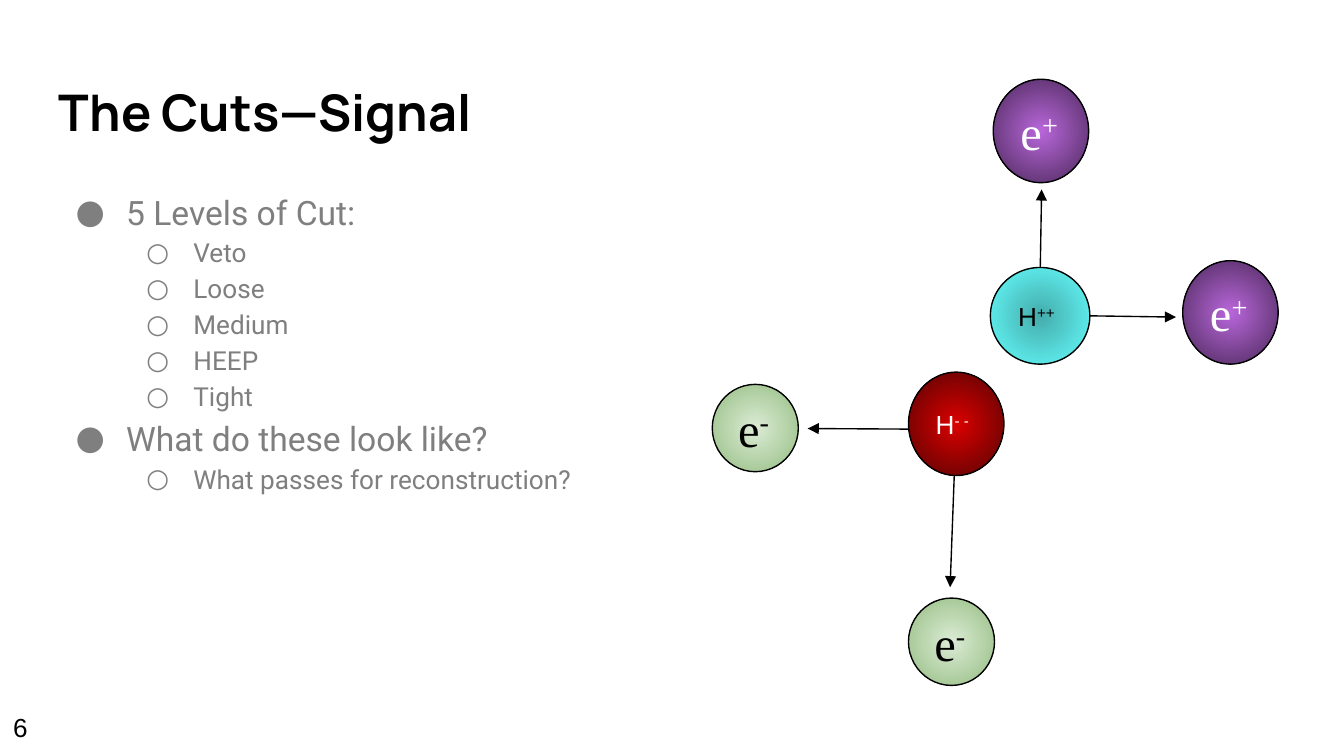
from dataclasses import dataclass

from lxml.etree import SubElement
from pptx import Presentation
from pptx.dml.color import RGBColor
from pptx.enum.shapes import MSO_CONNECTOR as Connector, MSO_SHAPE as Preset
from pptx.enum.text import MSO_ANCHOR as Anchor
from pptx.oxml import parse_xml
from pptx.oxml.ns import nsdecls, qn
from pptx.slide import Slide
from pptx.text.text import TextFrame, _Paragraph as Paragraph
from pptx.util import Pt

BLACK, WHITE, GREY = "000000", "FFFFFF", "7F7F7F"
INSET = 7.2
LINE_WIDTH = 0.75


@dataclass(frozen=True)
class Species:
    symbol: str
    charge: str
    width: float
    height: float
    inner: str
    outer: str
    font: str
    size: float
    color: str


@dataclass(frozen=True)
class Particle:
    species: Species
    left: float
    top: float


@dataclass(frozen=True)
class Arrow:
    start: tuple[float, float]
    end: tuple[float, float]


@dataclass(frozen=True)
class Level:
    bullet: str
    size: float
    margin: float
    indent: float


POSITRON = Species("e", "+", 51.1, 55.4, "B967DB", "492857", "Times New Roman", 26, WHITE)
ELECTRON = Species("e", "-", 46.1, 46.8, "DCECD5", "93BC81", "Times New Roman", 26, BLACK)
HIGGS_MINUS = Species("H", "- -", 51.1, 55.4, "DB0000", "540303", "Arial", 14, WHITE)
HIGGS_PLUS = Species("H", "++", 53.3, 51.8, "45ACAC", "66FFFF", "Arial", 14, BLACK)

PARTICLES = [
    Particle(HIGGS_MINUS, 486.7, 199.4),
    Particle(HIGGS_PLUS, 530.6, 143.3),
    Particle(ELECTRON, 381.6, 205.9),
    Particle(ELECTRON, 486.7, 320.4),
    Particle(POSITRON, 532.1, 42.5),
    Particle(POSITRON, 633.6, 139.7),
]
ARROWS = [
    Arrow((511.2, 254.9), (509, 314.6)),
    Arrow((486.7, 229.9), (432.7, 229.6)),
    Arrow((557.3, 143.3), (558, 101.5)),
    Arrow((583.9, 169.2), (630, 169.9)),
]

TOPIC = Level("●", 18, 36, -27)
DETAIL = Level("○", 14, 72, -25.2)
OUTLINE = [
    (TOPIC, "5 Levels of Cut:"),
    *((DETAIL, name) for name in ("Veto", "Loose", "Medium", "HEEP", "Tight")),
    (TOPIC, "What do these look like?"),
    (DETAIL, "What passes for reconstruction?"),
]


def rgb(color: str) -> RGBColor:
    return RGBColor.from_string(color)


def set_font(para: Paragraph, name: str, size: float, color: str, bold: bool = False) -> None:
    para.font.name = name
    para.font.size = Pt(size)
    para.font.bold = bold
    para.font.color.rgb = rgb(color)


def set_frame(frame: TextFrame, anchor: Anchor) -> None:
    frame.word_wrap = True
    frame.vertical_anchor = anchor
    frame.margin_left = frame.margin_right = Pt(INSET)
    frame.margin_top = frame.margin_bottom = Pt(INSET)


def add_text_box(page: Slide, left: float, top: float, width: float, height: float,
                 anchor: Anchor = Anchor.TOP) -> TextFrame:
    box = page.shapes.add_textbox(Pt(left), Pt(top), Pt(width), Pt(height))
    set_frame(box.text_frame, anchor)
    return box.text_frame


def set_bullet(para: Paragraph, level: Level) -> None:
    props = para._p.get_or_add_pPr()
    props.set("marL", str(Pt(level.margin)))
    props.set("indent", str(Pt(level.indent)))
    SubElement(SubElement(props, qn("a:buClr")), qn("a:srgbClr"), val=GREY)
    SubElement(props, qn("a:buFont"), typeface="Roboto")
    SubElement(props, qn("a:buChar"), char=level.bullet)


def add_outline(page: Slide) -> None:
    frame = add_text_box(page, 24.5, 92.2, 671, 269.3)
    for index, (level, text) in enumerate(OUTLINE):
        para = frame.add_paragraph() if index else frame.paragraphs[0]
        para.text = text
        para.level = int(level is DETAIL)
        para.line_spacing = 1.15
        set_bullet(para, level)
        set_font(para, "Roboto", level.size, GREY)


def add_particle(page: Slide, particle: Particle) -> None:
    kind = particle.species
    ball = page.shapes.add_shape(Preset.OVAL, Pt(particle.left), Pt(particle.top),
                                 Pt(kind.width), Pt(kind.height))
    ball.shadow.inherit = False
    ball.line.color.rgb = rgb(BLACK)
    ball.line.width = Pt(LINE_WIDTH)

    # Radial gradient from the centre outwards
    ball._element.spPr.find(qn("a:prstGeom")).addnext(parse_xml(
        f'<a:gradFill {nsdecls("a")} rotWithShape="1"><a:gsLst>'
        f'<a:gs pos="0"><a:srgbClr val="{kind.inner}"/></a:gs>'
        f'<a:gs pos="100000"><a:srgbClr val="{kind.outer}"/></a:gs></a:gsLst>'
        '<a:path path="circle"><a:fillToRect l="50000" t="50000" r="50000" b="50000"/>'
        '</a:path></a:gradFill>'))

    # Symbol with its charge raised
    set_frame(ball.text_frame, Anchor.MIDDLE)
    para = ball.text_frame.paragraphs[0]
    para.alignment = 1
    para.add_run().text = kind.symbol
    charge = para.add_run()
    charge.text = kind.charge
    charge._r.get_or_add_rPr().set("baseline", "30000")
    set_font(para, kind.font, kind.size, kind.color)


def add_arrow(page: Slide, arrow: Arrow) -> None:
    line = page.shapes.add_connector(Connector.STRAIGHT, *map(Pt, arrow.start + arrow.end))
    line.line.color.rgb = rgb(BLACK)
    line.line.width = Pt(LINE_WIDTH)
    SubElement(line.line._get_or_add_ln(), qn("a:tailEnd"), type="triangle")
    SubElement(line._element.spPr, qn("a:effectLst"))


def main() -> None:
    deck = Presentation()
    deck.slide_width, deck.slide_height = Pt(720), Pt(405)
    page = deck.slides.add_slide(deck.slide_layouts[6])

    # Title and outline
    title = add_text_box(page, 24.5, 35.3, 671, 49, Anchor.MIDDLE).paragraphs[0]
    title.text = "The Cuts—Signal"
    set_font(title, "Manrope", 27, BLACK, bold=True)
    add_outline(page)

    # Decay diagram
    for arrow in ARROWS:
        add_arrow(page, arrow)
    for particle in PARTICLES:
        add_particle(page, particle)

    # Page number
    number = add_text_box(page, 0, 373.7, 309.6, 31.7).paragraphs[0]
    number.text = "6"
    set_font(number, "Arial", 14, BLACK)

    deck.save("out.pptx")


if __name__ == "__main__":
    main()
